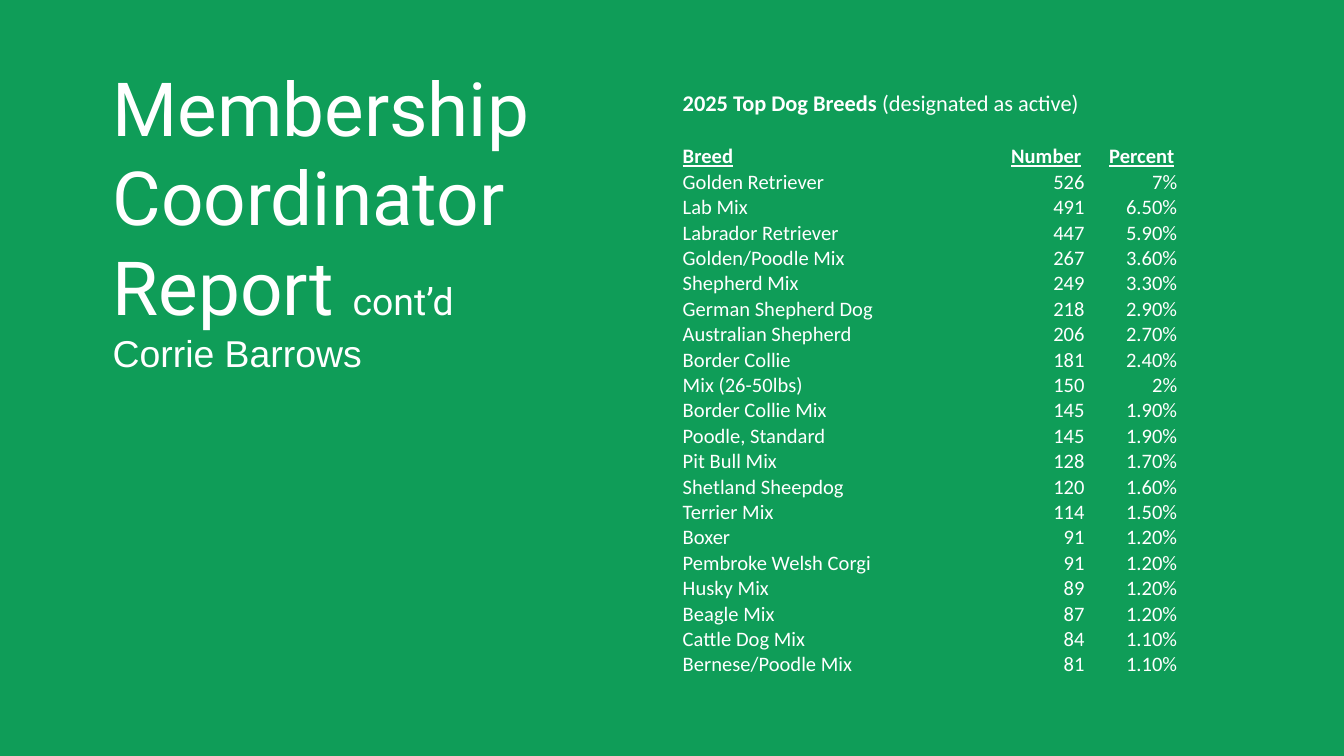
"""Build the membership slide listing the top dog breeds."""
import pptx
import pptx.dml.color
import pptx.enum.text
import pptx.util
from lxml import etree

Pt = pptx.util.Pt
ALIGN = pptx.enum.text.PP_ALIGN
ANCHOR = pptx.enum.text.MSO_ANCHOR

GREEN, WHITE = "0F9D58", "FFFFFF"
NO_GRID_STYLE = "{2D5ABB26-0587-4C30-8999-92F81FD0307C}"

TITLE = [
    [("Membership Coordinator Report ", 40, "Roboto"), ("cont’d", 20, "Roboto")],
    [("Corrie Barrows", 20, "Arial")],
]
CAPTION = [("2025 Top Dog Breeds ", True), ("(designated as active)", False)]
HEADINGS = ("Breed", "Number", "Percent")
BREEDS = [
    ("Golden Retriever", "526", "7%"),
    ("Lab Mix", "491", "6.50%"),
    ("Labrador Retriever", "447", "5.90%"),
    ("Golden/Poodle Mix", "267", "3.60%"),
    ("Shepherd Mix", "249", "3.30%"),
    ("German Shepherd Dog", "218", "2.90%"),
    ("Australian Shepherd", "206", "2.70%"),
    ("Border Collie", "181", "2.40%"),
    ("Mix (26-50lbs)", "150", "2%"),
    ("Border Collie Mix", "145", "1.90%"),
    ("Poodle, Standard", "145", "1.90%"),
    ("Pit Bull Mix", "128", "1.70%"),
    ("Shetland Sheepdog", "120", "1.60%"),
    ("Terrier Mix", "114", "1.50%"),
    ("Boxer", "91", "1.20%"),
    ("Pembroke Welsh Corgi", "91", "1.20%"),
    ("Husky Mix", "89", "1.20%"),
    ("Beagle Mix", "87", "1.20%"),
    ("Cattle Dog Mix", "84", "1.10%"),
    ("Bernese/Poodle Mix", "81", "1.10%"),
]
EMPTY_ROW = ("", "", "")
ROWS = [EMPTY_ROW, EMPTY_ROW, HEADINGS, *BREEDS, EMPTY_ROW, EMPTY_ROW]
COLUMN_WIDTHS = (174.24, 52.56, 49.68)
ROW_HEIGHTS = [14.6, 14.4] + [13.62] * (len(ROWS) - 2)


def color(value):
    return pptx.dml.color.RGBColor.from_string(value)


def add_span(para, text, size, font, bold=False, underline=False):
    span = para.add_run()
    span.text = text
    span.font.size = Pt(size)
    span.font.name = font
    span.font.bold = bold
    span.font.underline = underline
    span.font.color.rgb = color(WHITE)


def add_title(page):
    box = page.shapes.add_textbox(Pt(53.28), Pt(33.84), Pt(292.32), Pt(166.32))
    frame = box.text_frame
    frame.word_wrap = True
    frame.vertical_anchor = ANCHOR.MIDDLE
    frame.margin_left = frame.margin_right = Pt(7.2)
    frame.margin_top = frame.margin_bottom = Pt(7.2)
    for index, spans in enumerate(TITLE):
        para = frame.add_paragraph() if index else frame.paragraphs[0]
        for text, size, font in spans:
            add_span(para, text, size, font)


def fill_cell(cell, text, column, heading):
    cell.fill.background()
    cell.vertical_anchor = ANCHOR.BOTTOM
    cell.margin_left = cell.margin_right = Pt(5.76)
    cell.margin_top = cell.margin_bottom = 0
    para = cell.text_frame.paragraphs[0]
    if column:
        para.alignment = ALIGN.CENTER if heading else ALIGN.RIGHT
    if text:
        add_span(para, text, 11, "Calibri", heading, heading)
    else:
        end = etree.SubElement(para._p, pptx.oxml.ns.qn("a:endParaRPr"))
        end.set("sz", "1100")


def add_breed_table(page):
    frame = page.shapes.add_table(
        len(ROWS), len(HEADINGS), Pt(360), Pt(48.24),
        Pt(sum(COLUMN_WIDTHS)), Pt(sum(ROW_HEIGHTS)))
    table = frame.table
    table.first_row = table.horz_banding = False
    table._tbl.tblPr.find(pptx.oxml.ns.qn("a:tableStyleId")).text = NO_GRID_STYLE
    for column, width in zip(table.columns, COLUMN_WIDTHS):
        column.width = Pt(width)
    for row, height in zip(table.rows, ROW_HEIGHTS):
        row.height = Pt(height)
    for row, values in enumerate(ROWS):
        for column, text in enumerate(values):
            fill_cell(table.cell(row, column), text, column, values is HEADINGS)
    for row in (0, len(ROWS) - 2):
        table.cell(row, 0).merge(table.cell(row, len(HEADINGS) - 1))
    caption = table.cell(0, 0)
    caption.vertical_anchor = ANCHOR.MIDDLE
    para = caption.text_frame.paragraphs[0]
    for text, bold in CAPTION:
        add_span(para, text, 12, "Calibri", bold)


def main():
    deck = pptx.Presentation()
    deck.slide_width, deck.slide_height = Pt(720), Pt(405)
    page = deck.slides.add_slide(deck.slide_layouts[6])
    page.background.fill.solid()
    page.background.fill.fore_color.rgb = color(GREEN)
    add_title(page)
    add_breed_table(page)
    deck.save("out.pptx")


if __name__ == "__main__":
    main()
